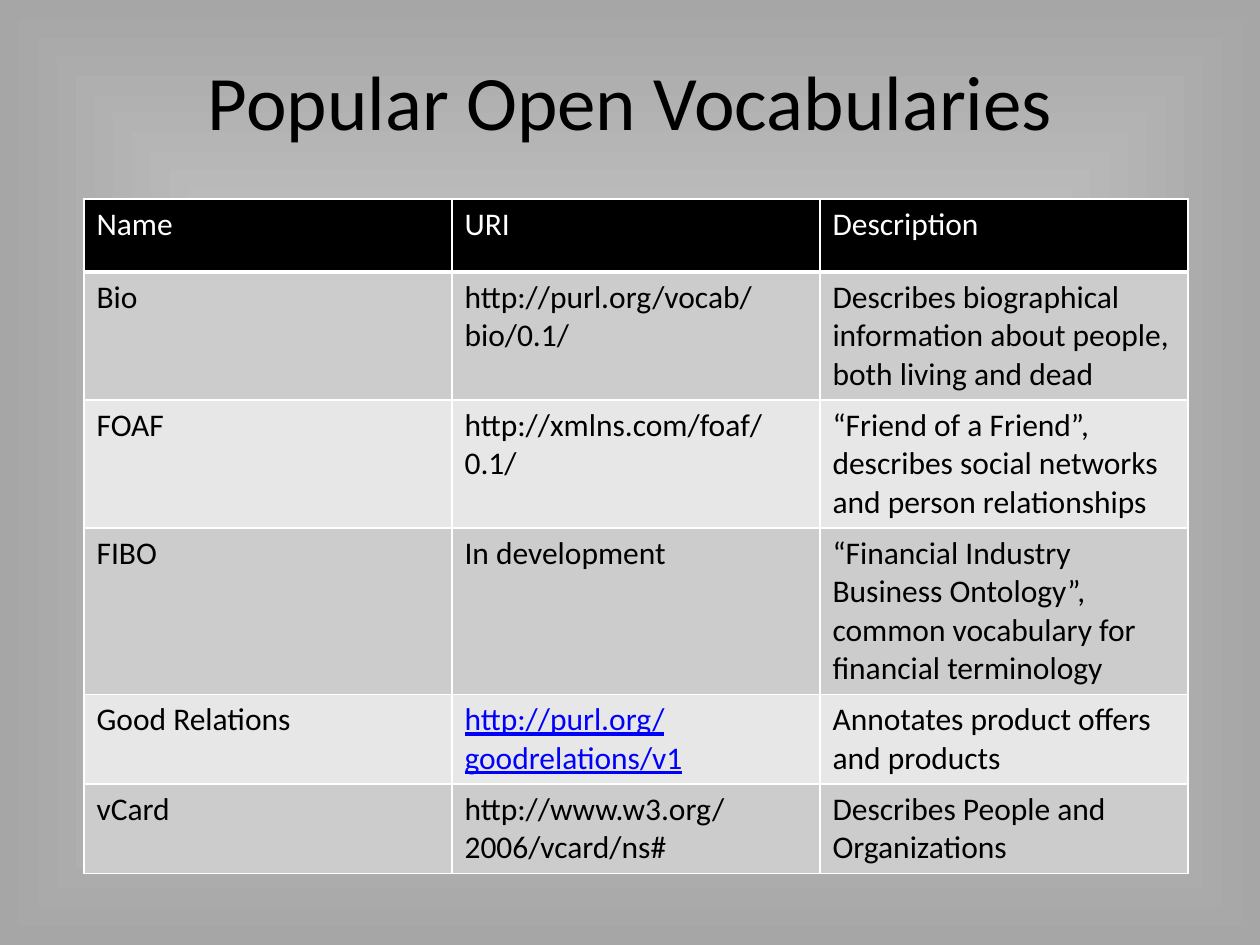
import lxml.etree
import pptx
import pptx.dml.color
import pptx.enum.text
import pptx.oxml.ns
import pptx.util

EMU_PER_PX = 914400 / 126
SLIDE_SIZE = (1260, 945)
COLUMN_WIDTHS = [368, 368, 368]
ROW_HEIGHTS = [73, 121, 121, 158, 84, 84]
LINKED_ADDRESS = "http://purl.org/goodrelations/v1"
VOCABULARIES = [
    ("Name", "URI", "Description"),
    ("Bio", "http://purl.org/vocab/bio/0.1/",
     "Describes biographical information about people, both living and dead"),
    ("FOAF", "http://xmlns.com/foaf/0.1/",
     "“Friend of a Friend”, describes social networks and person relationships"),
    ("FIBO", "In development",
     "“Financial Industry Business Ontology”, common vocabulary for financial terminology"),
    ("Good Relations", LINKED_ADDRESS, "Annotates product offers and products"),
    ("vCard", "http://www.w3.org/2006/vcard/ns#", "Describes People and Organizations"),
]


def px(length):
    return pptx.util.Emu(round(length * EMU_PER_PX))


def color(hex_string):
    return pptx.dml.color.RGBColor.from_string(hex_string)


def add_element(parent, tag, **attributes):
    return lxml.etree.SubElement(parent, pptx.oxml.ns.qn(tag), attributes)


class SlideBuilder:
    font_name = "Calibri"
    title_size = 44
    body_size = 18
    text_color = "000000"
    link_color = "0000FF"
    header_fill = "000000"
    header_text = "FFFFFF"
    band_fills = ("E7E7E7", "CCCCCC")
    border_color = "FFFFFF"

    def __init__(self, slide):
        self.slide = slide

    def set_background(self, center, edge):
        """Fill the background with a gradient that runs from the centre to the edges."""
        fill = self.slide.background.fill
        fill.gradient()
        for stop, hex_string in zip(fill.gradient_stops, (center, edge)):
            stop.color.rgb = color(hex_string)
        gradient = self.slide.element.find(".//" + pptx.oxml.ns.qn("a:gradFill"))
        gradient.remove(gradient.find(pptx.oxml.ns.qn("a:lin")))
        shade = add_element(gradient, "a:path", path="shape")
        add_element(shade, "a:fillToRect", l="50000", t="50000", r="50000", b="50000")

    def add_run(self, paragraph, text, size, hex_string, underline=False):
        run = paragraph.add_run()
        run.text = text
        run.font.name = self.font_name
        run.font.size = pptx.util.Pt(size)
        run.font.bold = False
        run.font.underline = underline
        run.font.color.rgb = color(hex_string)

    def set_title(self, text, left, top, width, height):
        title = self.slide.shapes.title
        title.left, title.top = px(left), px(top)
        title.width, title.height = px(width), px(height)
        title.text_frame.vertical_anchor = pptx.enum.text.MSO_ANCHOR.MIDDLE
        paragraph = title.text_frame.paragraphs[0]
        paragraph.alignment = pptx.enum.text.PP_ALIGN.CENTER
        self.add_run(paragraph, text, self.title_size, self.text_color)

    def add_borders(self, cell, widths):
        """Draw cell borders; widths maps the sides L, R, T, B, in that order, to points."""
        properties = cell._tc.get_or_add_tcPr()
        for side, width in widths.items():
            line = add_element(properties, "a:ln" + side, w=str(pptx.util.Pt(width)))
            solid = add_element(line, "a:solidFill")
            add_element(solid, "a:srgbClr", val=self.border_color)

    def fill_cell(self, cell, text, row_index):
        is_header = row_index == 0
        is_link = text == LINKED_ADDRESS
        self.add_borders(cell, {
            "L": 1, "R": 1,
            "T": 3 if row_index == 1 else 1,
            "B": 3 if is_header else 1,
        })
        cell.fill.solid()
        cell.fill.fore_color.rgb = color(
            self.header_fill if is_header else self.band_fills[row_index % 2])
        text_color = self.header_text if is_header else self.text_color
        self.add_run(cell.text_frame.paragraphs[0], text, self.body_size,
                     self.link_color if is_link else text_color, is_link)

    def add_table(self, rows, left, top, column_widths, row_heights):
        table = self.slide.shapes.add_table(
            len(rows), len(column_widths), px(left), px(top),
            px(sum(column_widths)), px(sum(row_heights))).table
        for column, width in zip(table.columns, column_widths):
            column.width = px(width)
        for row_index, (row, height) in enumerate(zip(table.rows, row_heights)):
            row.height = px(height)
            for cell, text in zip(row.cells, rows[row_index]):
                self.fill_cell(cell, text, row_index)


def main():
    presentation = pptx.Presentation()
    presentation.slide_width, presentation.slide_height = map(px, SLIDE_SIZE)
    title_only = presentation.slide_layouts[5]
    builder = SlideBuilder(presentation.slides.add_slide(title_only))
    builder.set_background("D9D9D9", "A6A6A6")
    builder.set_title("Popular Open Vocabularies", 32, 21, 1197, 158)
    builder.add_table(VOCABULARIES, 84, 199, COLUMN_WIDTHS, ROW_HEIGHTS)
    presentation.save("out.pptx")


if __name__ == "__main__":
    main()
